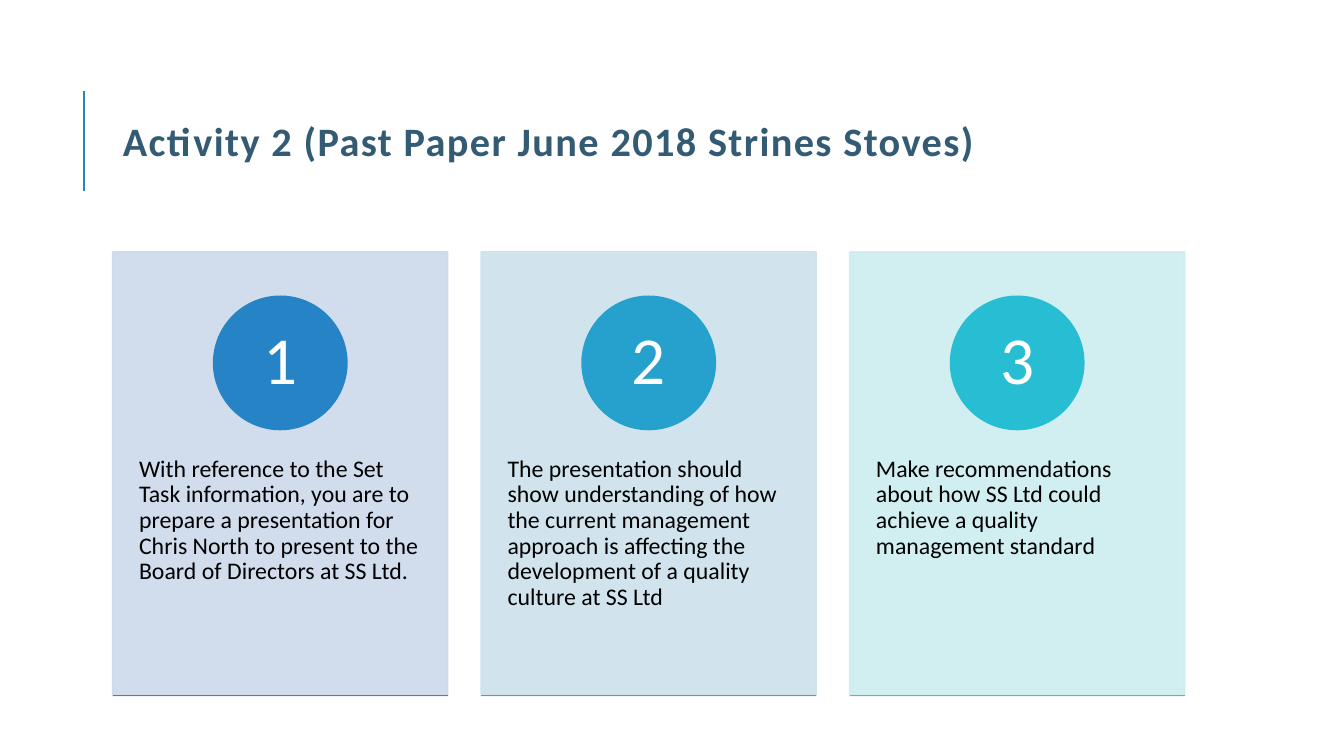
from pptx import Presentation
from pptx.dml.color import RGBColor
from pptx.enum.shapes import MSO_CONNECTOR, MSO_SHAPE
from pptx.enum.text import MSO_ANCHOR, PP_ALIGN
from pptx.oxml.ns import qn
from pptx.util import Inches, Pt
from lxml import etree

RECTANGLE, OVAL = MSO_SHAPE.RECTANGLE, MSO_SHAPE.OVAL
STRAIGHT = MSO_CONNECTOR.STRAIGHT
TOP, MIDDLE, BOTTOM = MSO_ANCHOR.TOP, MSO_ANCHOR.MIDDLE, MSO_ANCHOR.BOTTOM
LEFT, CENTER = PP_ALIGN.LEFT, PP_ALIGN.CENTER

TITLE = "Activity 2 (Past Paper June 2018 Strines Stoves)"
TASKS = [
    ("With reference to the Set Task information, you are to prepare a "
     "presentation for Chris North to present to the Board of Directors at SS Ltd.",
     "CDD9EA", "2683C6", "2691C9"),
    ("The presentation should show understanding of how the current management "
     "approach is affecting the development of a quality culture at SS Ltd",
     "CDE2ED", "26A0CD", "27AFD0"),
    ("Make recommendations about how SS Ltd could achieve a quality management standard",
     "CDEDF0", "27BED4", "27CED7"),
]

MARGIN, CONTENT_WIDTH = 8.4, 79.74
CARD_WIDTH = 24.91
CARD_PITCH = (CONTENT_WIDTH - CARD_WIDTH) / (len(TASKS) - 1)
CARD_TOP, CARD_HEIGHT = 33.33, 58.67
BADGE_WIDTH, BADGE_HEIGHT = 9.9, 17.6


def color(value):
    """Turn a hex string into a colour."""
    return RGBColor.from_string(value)


class SlideBuilder:
    """Draw styled elements on one slide, with lengths in percent of its size."""

    font = "Calibri"
    line_width = Pt(1.25)

    def __init__(self, presentation):
        """Add a blank slide to the presentation."""
        self.width = presentation.slide_width
        self.height = presentation.slide_height
        self.shapes = presentation.slides.add_slide(presentation.slide_layouts[6]).shapes

    def area(self, left, top, width, height):
        """Convert percentages to slide lengths."""
        return (int(self.width * left / 100), int(self.height * top / 100),
                int(self.width * width / 100), int(self.height * height / 100))

    def panel(self, kind, area, fill, opacity=100):
        """Add a preset shape with matching fill and outline."""
        panel = self.shapes.add_shape(kind, *self.area(*area))
        panel.shadow.inherit = False
        panel.fill.solid()
        panel.fill.fore_color.rgb = color(fill)
        panel.line.color.rgb = color(fill)
        panel.line.width = self.line_width
        if opacity < 100:
            for tint in panel.element.spPr.iter(qn("a:srgbClr")):
                etree.SubElement(tint, qn("a:alpha")).set("val", str(opacity * 1000))
        return panel

    def rule(self, start, end, stroke, width=line_width):
        """Add a straight line between two points."""
        rule = self.shapes.add_connector(STRAIGHT, *self.area(*start, *end))
        rule.line.color.rgb = color(stroke)
        rule.line.width = width
        etree.SubElement(rule.element.spPr, qn("a:effectLst"))

    def label(self, holder, words, size, ink, anchor=TOP, align=LEFT,
              insets=(0.1, 0), bold=False, spacing=0):
        """Fill a shape or text box with one styled paragraph."""
        frame = holder.text_frame
        frame.text = words
        frame.word_wrap = True
        frame.vertical_anchor = anchor
        frame.margin_left = frame.margin_right = Inches(insets[0])
        frame.margin_top = frame.margin_bottom = Inches(insets[1])
        paragraph = frame.paragraphs[0]
        paragraph.alignment = align
        paragraph.line_spacing = 0.9
        run = paragraph.runs[0]
        run.font.name = self.font
        run.font.size = Pt(size)
        run.font.bold = bold
        run.font.color.rgb = color(ink)
        if spacing:
            run._r.get_or_add_rPr().set("spc", str(spacing * 100))

    def text(self, area, words, size, ink, **style):
        """Add a text box."""
        self.label(self.shapes.add_textbox(*self.area(*area)), words, size, ink, **style)

    def card(self, index, task, tint, accent, edge):
        """Add one numbered task card in its grid column."""
        left = MARGIN + index * CARD_PITCH
        bottom = CARD_TOP + CARD_HEIGHT
        self.panel(RECTANGLE, (left, CARD_TOP, CARD_WIDTH, CARD_HEIGHT), tint, opacity=90)
        self.text((left, 55.6, CARD_WIDTH, 35.2), task, 17, "000000", insets=(0.26, 0.36))
        badge_left = left + (CARD_WIDTH - BADGE_WIDTH) / 2
        badge = self.panel(OVAL, (badge_left, 39.2, BADGE_WIDTH, BADGE_HEIGHT), accent)
        self.label(badge, str(index + 1), 48, "FFFFFF", anchor=MIDDLE, align=CENTER,
                   insets=(0.1, 0.01))
        self.rule((left, bottom), (left + CARD_WIDTH, bottom), edge)


def main():
    """Build and save the slide."""
    presentation = Presentation()
    presentation.slide_width = Inches(13.33)
    presentation.slide_height = Inches(7.5)
    slide = SlideBuilder(presentation)
    slide.rule((6.25, 25.33), (6.25, 12), "2683C6", Pt(1.5))
    slide.text((MARGIN, 8.8, CONTENT_WIDTH, 13.07), TITLE, 28.8, "335B74",
               anchor=BOTTOM, bold=True, spacing=1)
    for index, task in enumerate(TASKS):
        slide.card(index, *task)
    presentation.save("out.pptx")


if __name__ == "__main__":
    main()
